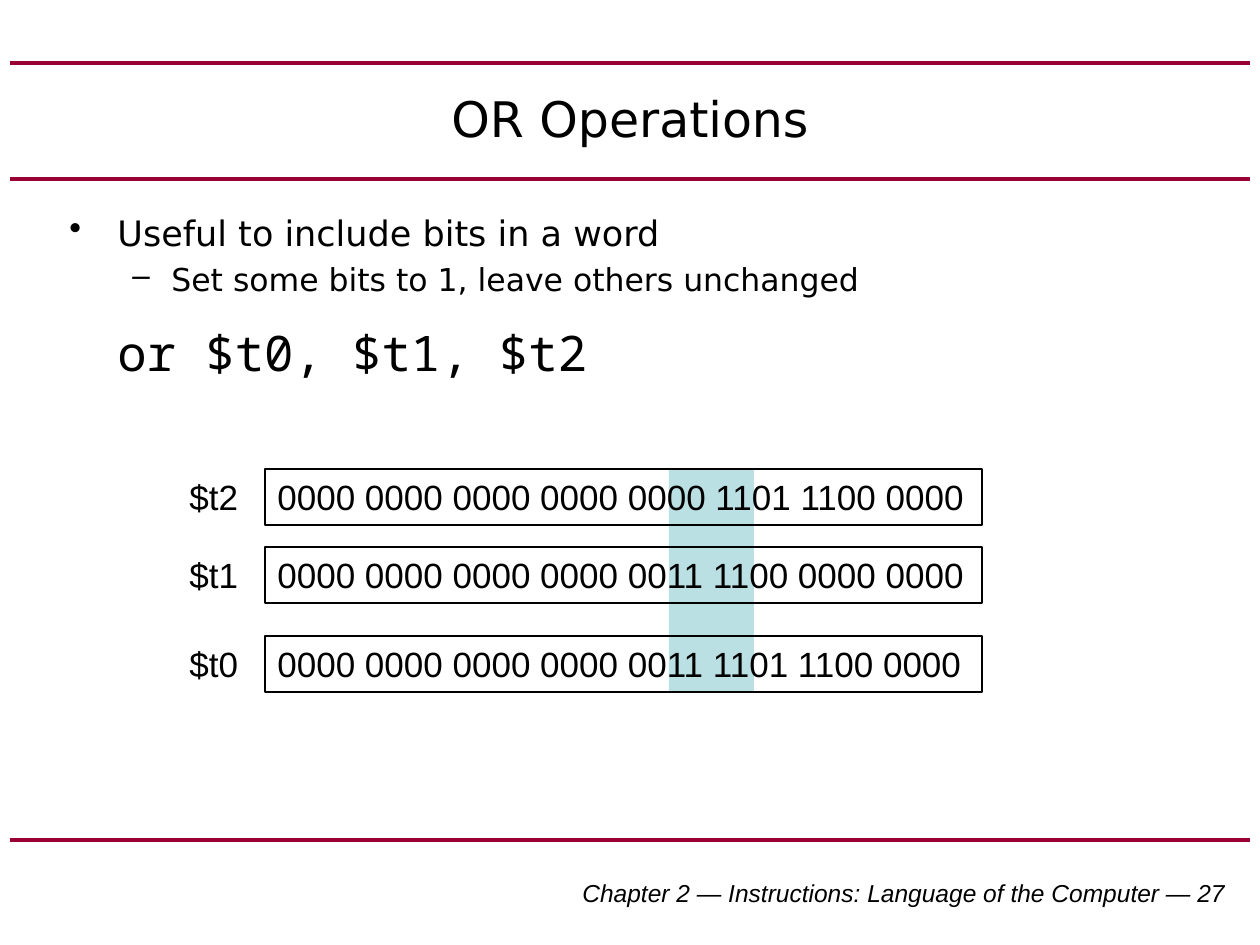
"""Build the "OR Operations" slide with its bit-by-bit register example."""
from typing import NamedTuple, Optional

from lxml import etree
from pptx import Presentation
from pptx import util as u
from pptx.dml.color import RGBColor
from pptx.enum import shapes, text
from pptx.oxml import ns

PX_PER_INCH = 126
BLACK = RGBColor(0x00, 0x00, 0x00)
CRIMSON = RGBColor(0x99, 0x00, 0x33)
PALE_TEAL = RGBColor(0xBB, 0xE0, 0xE3)
SANS, MONO, ARIAL = "DejaVu Sans", "Noto Sans Mono", "Arial"
RULE_LEFT, RULE_RIGHT = 10, 1250
RULE_TOPS = (63, 179, 840)


class Box(NamedTuple):
    left: int
    top: int
    width: int
    height: int


class Style(NamedTuple):
    size: int
    font: str
    italic: bool = False


class Point(NamedTuple):
    wording: str
    style: Style
    margin: int
    hanging: int
    bullet: Optional[str] = None
    space_before: int = 0


class Register(NamedTuple):
    name: str
    bits: str
    top: int


REGISTER_STYLE = Style(20, ARIAL)
POINTS = (
    Point("Useful to include bits in a word", Style(20, SANS), 48, 48, "•"),
    Point("Set some bits to 1, leave others unchanged", Style(18, SANS), 102, 39, "–", 4),
    Point("or $t0, $t1, $t2", Style(28, MONO), 48, 0, space_before=14),
)
REGISTERS = (
    Register("$t2", "0000 0000 0000 0000 0000 1101 1100 0000", 469),
    Register("$t1", "0000 0000 0000 0000 0011 1100 0000 0000", 547),
    Register("$t0", "0000 0000 0000 0000 0011 1101 1100 0000", 636),
)


def px(length: int) -> u.Emu:
    """Turn pixels into EMU."""
    return u.Emu(round(length * u.Inches(1) / PX_PER_INCH))


def add_run(paragraph, wording: str, style: Style) -> None:
    """Add one styled run."""
    run = paragraph.add_run()
    run.text = wording
    run.font.size = u.Pt(style.size)
    run.font.name = style.font
    run.font.italic = style.italic
    run.font.color.rgb = BLACK


def add_text(slide, box: Box, wording: str, style: Style,
             alignment=text.PP_ALIGN.LEFT, anchor=text.MSO_ANCHOR.TOP, wrap: bool = True) -> None:
    """Add a text box of one paragraph."""
    frame = slide.shapes.add_textbox(*map(px, box)).text_frame
    frame.word_wrap = wrap
    frame.vertical_anchor = anchor
    frame.paragraphs[0].alignment = alignment
    add_run(frame.paragraphs[0], wording, style)


def add_rectangle(slide, box: Box, fill: Optional[RGBColor] = None,
                  line: Optional[RGBColor] = None):
    """Add a rectangle with an optional fill and outline."""
    shape = slide.shapes.add_shape(shapes.MSO_SHAPE.RECTANGLE, *map(px, box))
    shape.shadow.inherit = False
    if fill is None:
        shape.fill.background()
    else:
        shape.fill.solid()
        shape.fill.fore_color.rgb = fill
    if line is None:
        shape.line.fill.background()
    else:
        shape.line.color.rgb = line
        shape.line.width = u.Pt(0.75)
    return shape


def add_rule(slide, top: int) -> None:
    """Add a horizontal rule across the slide."""
    rule = slide.shapes.add_connector(
        shapes.MSO_CONNECTOR.STRAIGHT, px(RULE_LEFT), px(top), px(RULE_RIGHT), px(top))
    rule.line.color.rgb = CRIMSON
    rule.line.width = u.Pt(2.25)
    etree.SubElement(rule._element.spPr, ns.qn("a:effectLst"))


def add_points(slide, box: Box, points: tuple[Point, ...]) -> None:
    """Add the indented list of points."""
    frame = slide.shapes.add_textbox(*map(px, box)).text_frame
    frame.word_wrap = True
    for index, point in enumerate(points):
        paragraph = frame.add_paragraph() if index else frame.paragraphs[0]
        paragraph.space_before = u.Pt(point.space_before)
        properties = paragraph._p.get_or_add_pPr()
        properties.set("marL", str(px(point.margin)))
        properties.set("indent", str(-px(point.hanging)))
        if point.bullet:
            etree.SubElement(properties, ns.qn("a:buChar"), char=point.bullet)
        add_run(paragraph, point.wording, point.style)


def add_register(slide, register: Register) -> None:
    """Add a register's name and its framed bits."""
    shape = add_rectangle(slide, Box(265, register.top, 717, 56), line=BLACK)
    frame = shape.text_frame
    frame.word_wrap = True
    frame.vertical_anchor = text.MSO_ANCHOR.TOP
    frame.paragraphs[0].alignment = text.PP_ALIGN.LEFT
    add_run(frame.paragraphs[0], register.bits, REGISTER_STYLE)
    add_text(slide, Box(177, register.top, 74, 54), register.name, REGISTER_STYLE, wrap=False)


def main() -> None:
    """Build and save the slide."""
    presentation = Presentation()
    presentation.slide_width, presentation.slide_height = u.Inches(10), u.Inches(7.5)
    slide = presentation.slides.add_slide(presentation.slide_layouts[6])
    for top in RULE_TOPS:
        add_rule(slide, top)
    add_text(slide, Box(472, 872, 766, 42),
             "Chapter 2 — Instructions: Language of the Computer — 27",
             Style(14, ARIAL, italic=True), text.PP_ALIGN.RIGHT)
    add_rectangle(slide, Box(669, 470, 85, 221), fill=PALE_TEAL)
    add_text(slide, Box(63, 63, 1134, 110), "OR Operations", Style(28, SANS),
             text.PP_ALIGN.CENTER, text.MSO_ANCHOR.MIDDLE)
    add_points(slide, Box(57, 205, 1140, 223), POINTS)
    for register in REGISTERS:
        add_register(slide, register)
    presentation.save("out.pptx")


if __name__ == "__main__":
    main()
